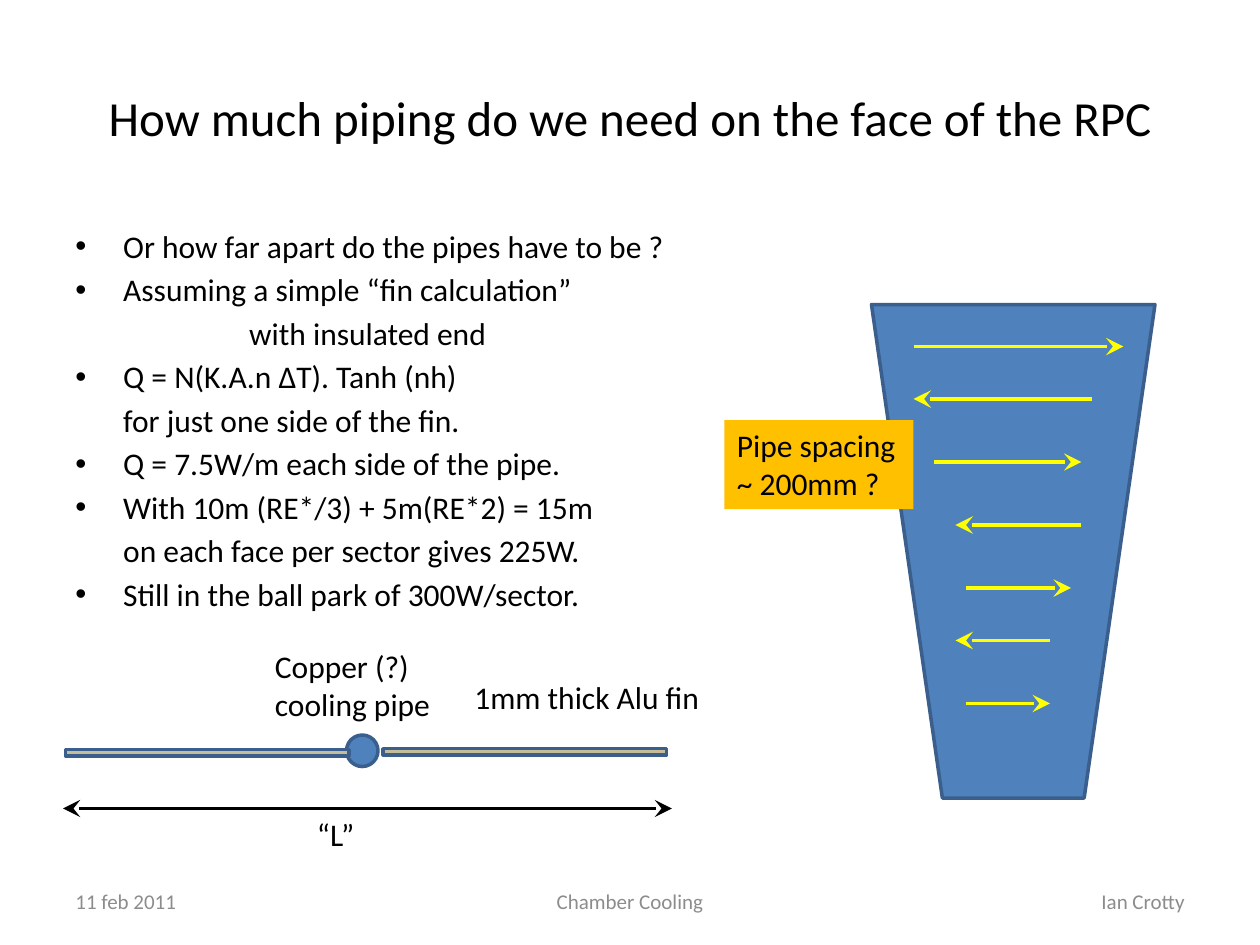
import pptx
import pptx.util
from dataclasses import dataclass
from lxml import etree
from pptx.dml.color import RGBColor
from pptx.enum.shapes import MSO_CONNECTOR, MSO_SHAPE
from pptx.enum.text import MSO_ANCHOR, PP_ALIGN
from pptx.oxml.ns import qn

COLS, ROWS = 120, 90  # grid cells of 1/12 inch


@dataclass(frozen=True)
class Theme:
    font: str = "Calibri"
    title: int = 28
    body: int = 18
    small: int = 12
    ink: str = "000000"
    muted: str = "8C8C8C"
    blue: str = "4F81BD"
    edge: str = "3A5F8C"
    fin: str = "C4BD97"
    pipe: str = "FFFF00"
    note: str = "FFC000"


def add_text(tf, text, first=False, size=18, color="000000", font="Calibri",
             align=PP_ALIGN.LEFT, bullet=None, margin=0, hang=0, before=0):
    """Write one paragraph; margin and hang are in inches."""
    p = tf.paragraphs[0] if first else tf.add_paragraph()
    pPr = p._p.get_or_add_pPr()
    if margin:
        pPr.set("marL", str(pptx.util.Inches(margin)))
        pPr.set("indent", str(-pptx.util.Inches(hang)))
    if bullet:
        etree.SubElement(pPr, qn("a:buFont")).set("typeface", "Arial")
        etree.SubElement(pPr, qn("a:buChar")).set("char", bullet)
    p.alignment = align
    p.space_before = pptx.util.Pt(0 if first else before)
    r = p.add_run()
    r.text = text
    r.font.name, r.font.size = font, pptx.util.Pt(size)
    r.font.color.rgb = RGBColor.from_string(color)


class SlideBuilder:
    def __init__(self, prs, theme):
        self.theme = theme
        self.cell_w = prs.slide_width / COLS
        self.cell_h = prs.slide_height / ROWS
        self.s = prs.slides.add_slide(prs.slide_layouts[6])

    def x(self, cols):
        return round(cols * self.cell_w)

    def y(self, rows):
        return round(rows * self.cell_h)

    def box(self, col, row, cols, rows):
        return self.x(col), self.y(row), self.x(cols), self.y(rows)

    def text(self, text, *at, anchor=MSO_ANCHOR.TOP, **fmt):
        tf = self.s.shapes.add_textbox(*self.box(*at)).text_frame
        tf.word_wrap, tf.vertical_anchor = True, anchor
        if text:
            add_text(tf, text, first=True, font=self.theme.font, **fmt)
        return tf

    def bullets(self, items, *at):
        tf = self.text(None, *at)
        for i, (text, bullet, margin) in enumerate(items):
            add_text(tf, text, first=i == 0, size=self.theme.body,
                     color=self.theme.ink, font=self.theme.font, bullet=bullet,
                     margin=margin, hang=margin if bullet else 0, before=3.25)

    def shape(self, kind, *at, fill, edge=None, rotation=0):
        sp = self.s.shapes.add_shape(kind, *self.box(*at))
        sp.shadow.inherit = False
        sp.rotation = rotation
        sp.fill.solid()
        sp.fill.fore_color.rgb = RGBColor.from_string(fill)
        if edge:
            sp.line.color.rgb = RGBColor.from_string(edge)
            sp.line.width = pptx.util.Pt(2)
        else:
            sp.line.fill.background()
        return sp

    def arrow(self, start, end, row, color, width, ends=("tailEnd",)):
        c = self.s.shapes.add_connector(MSO_CONNECTOR.STRAIGHT, self.x(start),
                                        self.y(row), self.x(end), self.y(row))
        c.line.color.rgb = RGBColor.from_string(color)
        c.line.width = pptx.util.Pt(width)
        ln = c.line._get_or_add_ln()
        for name in ends:
            head = etree.SubElement(ln, qn("a:" + name))
            for key, value in (("type", "stealth"), ("w", "lg"), ("len", "lg")):
                head.set(key, value)
        etree.SubElement(c._element.spPr, qn("a:effectLst"))


def main():
    prs = pptx.Presentation()
    prs.slide_width, prs.slide_height = pptx.util.Inches(10), pptx.util.Inches(7.5)
    t = Theme()
    b = SlideBuilder(prs, t)
    body = dict(size=t.body, color=t.ink)

    # Title
    b.text("How much piping do we need on the face of the RPC", 6, 3.6, 108, 15,
           anchor=MSO_ANCHOR.MIDDLE, align=PP_ALIGN.CENTER, size=t.title, color=t.ink)

    # Argument: lines without a bullet continue the one above
    level, deep = 0.38, 1.38
    b.bullets([
        ("Or how far apart do the pipes have to be ?", "•", level),
        ("Assuming a simple “fin calculation”", "•", level),
        ("with insulated end", None, deep),
        ("Q = N(K.A.n ∆T). Tanh (nh)", "•", level),
        ("for just one side of the fin.", None, level),
        ("Q = 7.5W/m each side of the pipe.", "•", level),
        ("With 10m (RE*/3) + 5m(RE*2) = 15m", "•", level),
        ("on each face per sector gives 225W.", None, level),
        ("Still in the ball park of 300W/sector.", "•", level),
    ], 6, 21, 108, 59.4)

    # Footer
    for text, col, cols, align in (
            ("11 feb 2011", 6, 28, PP_ALIGN.LEFT),
            ("Chamber Cooling", 41, 38, PP_ALIGN.CENTER),
            ("Ian Crotty", 86, 28, PP_ALIGN.RIGHT)):
        b.text(text, col, 83.4, cols, 4.8, anchor=MSO_ANCHOR.MIDDLE,
               align=align, size=t.small, color=t.muted)

    # Pipe between two fins, with its length
    b.shape(MSO_SHAPE.RECTANGLE, 36.5, 71.3, 27, 0.6, fill=t.fin, edge=t.edge)
    b.shape(MSO_SHAPE.OVAL, 33, 70, 3, 3, fill=t.blue, edge=t.edge)
    b.shape(MSO_SHAPE.RECTANGLE, 6.25, 71.4, 27, 0.6, fill=t.fin, edge=t.edge)
    b.text("Copper (?) cooling pipe", 25, 61, 21, 8.5, **body)
    b.arrow(6, 64, 77, t.ink, 1.5, ends=("headEnd", "tailEnd"))
    b.text("“L”", 29, 77, 10, 4.8, **body)
    b.text("1mm thick Alu fin", 44, 64, 27, 4.8, **body)

    # Chamber face with the pipe runs in alternating directions
    b.shape(MSO_SHAPE.TRAPEZOID, 83, 29, 27, 47, fill=t.blue, edge=t.edge, rotation=180)
    for start, end, row in ((87, 107, 33), (104, 87, 38), (89, 103, 44), (103, 91, 50),
                            (92, 102, 56), (100, 91, 61), (92, 100, 67)):
        b.arrow(start, end, row, t.pipe, 2)

    # Spacing note
    note = b.shape(MSO_SHAPE.RECTANGLE, 69, 40, 18, 8.5, fill=t.note)
    note.text_frame.word_wrap = True
    note.text_frame.vertical_anchor = MSO_ANCHOR.TOP
    add_text(note.text_frame, "Pipe spacing ~ 200mm ?", first=True, font=t.font, **body)

    prs.save("out.pptx")


if __name__ == "__main__":
    main()
